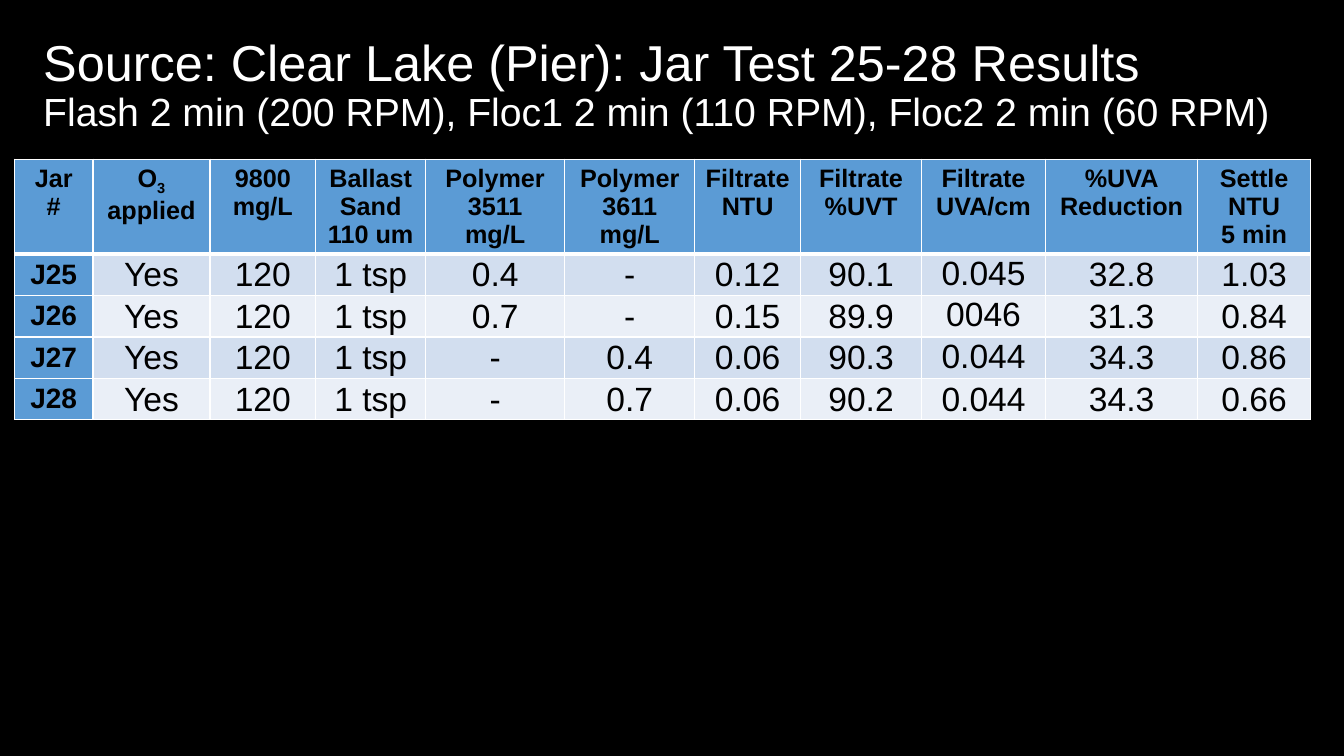
import dataclasses

import pptx
import pptx.dml.color
import pptx.enum.text
import pptx.oxml
import pptx.oxml.ns
import pptx.util

Pt = pptx.util.Pt
RGB = pptx.dml.color.RGBColor.from_string
ANCHOR = pptx.enum.text.MSO_ANCHOR
ALIGN = pptx.enum.text.PP_ALIGN


@dataclasses.dataclass(frozen=True)
class Theme:
    font: str = "Arial"
    background: str = "000000"
    title_color: str = "FFFFFF"
    cell_color: str = "000000"
    border: str = "FFFFFF"
    header_fill: str = "5B9BD5"
    bands: tuple = ("D2DEEF", "EAEFF7")
    title_size: int = 36
    subtitle_size: int = 28
    header_size: int = 18
    jar_size: int = 20
    value_size: int = 24


TITLE = "Source: Clear Lake (Pier): Jar Test 25-28 Results"
SUBTITLE = "Flash 2 min (200 RPM), Floc1 2 min (110 RPM), Floc2 2 min (60 RPM)"

# Header text and column width; "_" starts a subscript.
COLUMNS = [
    ("Jar #", 56.2),
    ("O_3\napplied", 83.5),
    ("9800\nmg/L", 75.6),
    ("Ballast\nSand\n110 um", 78.5),
    ("Polymer\n3511\nmg/L", 99.4),
    ("Polymer\n3611\nmg/L", 92.9),
    ("Filtrate\nNTU", 75.6),
    ("Filtrate\n%UVT", 86.4),
    ("Filtrate\nUVA/cm", 88.6),
    ("%UVA\nReduction", 108.7),
    ("Settle\nNTU\n5 min", 80.6),
]
RESULTS = [
    ("J25", "Yes", "120", "1 tsp", "0.4", "-", "0.12", "90.1", "0.045", "32.8", "1.03"),
    ("J26", "Yes", "120", "1 tsp", "0.7", "-", "0.15", "89.9", "0046", "31.3", "0.84"),
    ("J27", "Yes", "120", "1 tsp", "-", "0.4", "0.06", "90.3", "0.044", "34.3", "0.86"),
    ("J28", "Yes", "120", "1 tsp", "-", "0.7", "0.06", "90.2", "0.044", "34.3", "0.66"),
]
HEADER_HEIGHT, ROW_HEIGHT = 67.5, 29.6
UVA_COLUMN = 8
TOP_ALIGNED_ROWS = (1, 2, 3)


class SlideBuilder:
    def __init__(self, prs, theme):
        self.theme = theme
        self.slide = prs.slides.add_slide(prs.slide_layouts[6])
        fill = self.slide.background.fill
        fill.solid()
        fill.fore_color.rgb = RGB(theme.background)

    def run(self, p, text, size, color, bold=False, subscript=False):
        r = p.add_run()
        r.text = text
        for name, value in {"name": self.theme.font, "size": Pt(size), "bold": bold}.items():
            setattr(r.font, name, value)
        r.font.color.rgb = RGB(color)
        if subscript:
            r.font._element.set("baseline", "-25000")

    def title(self, x, y, w, h, title, subtitle):
        tf = self.slide.shapes.add_textbox(Pt(x), Pt(y), Pt(w), Pt(h)).text_frame
        tf.word_wrap = True
        tf.vertical_anchor = ANCHOR.MIDDLE
        p = tf.paragraphs[0]
        p.line_spacing = 0.9
        self.run(p, title, self.theme.title_size, self.theme.title_color)
        p.add_line_break()
        self.run(p, subtitle, self.theme.subtitle_size, self.theme.title_color)

    def borders(self, cell, top, bottom):
        tc_pr = cell._tc.get_or_add_tcPr()
        for side, width in {"L": 1, "R": 1, "T": top, "B": bottom}.items():
            tc_pr.append(pptx.oxml.parse_xml(
                f'<a:ln{side} {pptx.oxml.ns.nsdecls("a")} w="{Pt(width)}"><a:solidFill>'
                f'<a:srgbClr val="{self.theme.border}"/></a:solidFill></a:ln{side}>'))

    def cell(self, cell, text, size, fill, bold, **layout):
        for name, value in layout.items():
            setattr(cell, name, value)
        cell.fill.solid()
        cell.fill.fore_color.rgb = RGB(fill)
        tf = cell.text_frame
        for i, line in enumerate(text.split("\n")):
            p = tf.add_paragraph() if i else tf.paragraphs[0]
            p.alignment = ALIGN.CENTER
            for j, part in enumerate(line.split("_")):
                self.run(p, part, size, self.theme.cell_color, bold, subscript=j > 0)

    def results_table(self, x, y, columns, results):
        t = self.theme
        width = sum(w for _, w in columns)
        height = HEADER_HEIGHT + ROW_HEIGHT * len(results)
        table = self.slide.shapes.add_table(
            len(results) + 1, len(columns), Pt(x), Pt(y), Pt(width), Pt(height)).table
        for column, (_, w) in zip(table.columns, columns):
            column.width = Pt(w)
        rows = [[heading for heading, _ in columns], *results]
        for i, values in enumerate(rows):
            table.rows[i].height = Pt(ROW_HEIGHT if i else HEADER_HEIGHT)
            for j, text in enumerate(values):
                cell = table.cell(i, j)
                self.borders(cell, top=3 if i == 1 else 1, bottom=1 if i else 3)
                if i == 0 or j == 0:
                    self.cell(cell, text, t.jar_size if i else t.header_size,
                              t.header_fill, True)
                    continue
                raised = j == UVA_COLUMN and i in TOP_ALIGNED_ROWS
                self.cell(cell, text, t.value_size, t.bands[(i - 1) % 2], False,
                          margin_left=Pt(0.7), margin_right=Pt(0.7),
                          margin_top=Pt(0.7), margin_bottom=Pt(0),
                          vertical_anchor=ANCHOR.TOP if raised else ANCHOR.MIDDLE)


def main():
    prs = pptx.Presentation()
    prs.slide_width, prs.slide_height = Pt(960), Pt(540)
    s = SlideBuilder(prs, Theme())
    s.results_table(10.3, 113.8, COLUMNS, RESULTS)
    s.title(23.8, 9.4, 897.8, 104.4, TITLE, SUBTITLE)
    prs.save("out.pptx")


if __name__ == "__main__":
    main()
